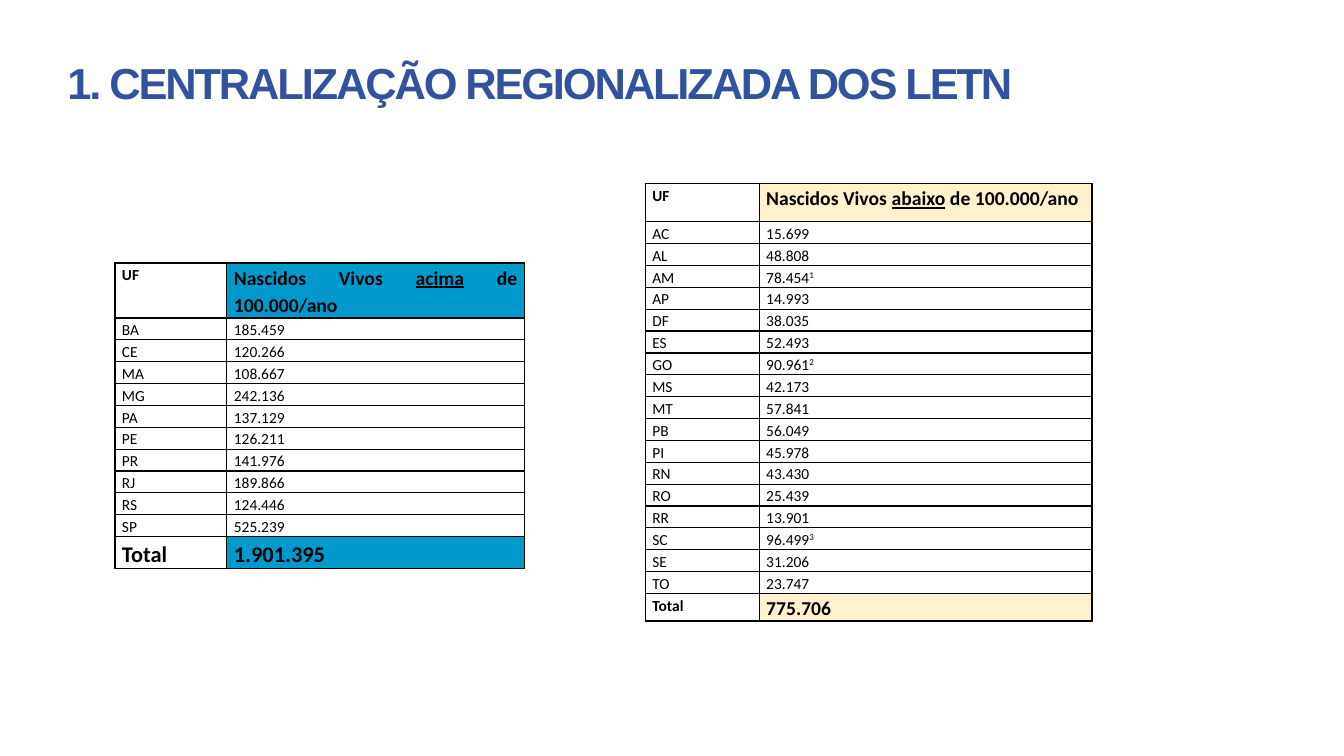
from pptx import Presentation
from pptx.dml.color import RGBColor
from pptx.enum.shapes import MSO_SHAPE
from pptx.enum.text import MSO_ANCHOR, PP_ALIGN
from pptx.oxml import parse_xml
from pptx.oxml.ns import nsdecls
from pptx.util import Inches, Pt

RECTANGLE = MSO_SHAPE.RECTANGLE
TOP = MSO_ANCHOR.TOP
LEFT, JUSTIFY = PP_ALIGN.LEFT, PP_ALIGN.JUSTIFY

WHITE = RGBColor(0xFF, 0xFF, 0xFF)
BLACK = RGBColor(0x00, 0x00, 0x00)
NAVY = RGBColor(0x33, 0x52, 0x9E)
BLUE = RGBColor(0x00, 0x99, 0xCC)
CREAM = RGBColor(0xFF, 0xF2, 0xCC)

HEADER_HEIGHT, ROW_HEIGHT = 0.38, 0.19
BODY_SIZE, HEADER_SIZE = 11, 14

BIRTHS_ABOVE = [
    ("BA", "185.459"), ("CE", "120.266"), ("MA", "108.667"), ("MG", "242.136"),
    ("PA", "137.129"), ("PE", "126.211"), ("PR", "141.976"), ("RJ", "189.866"),
    ("RS", "124.446"), ("SP", "525.239"),
]
BIRTHS_BELOW = [
    ("AC", "15.699"), ("AL", "48.808"), ("AM", "78.454", "1"), ("AP", "14.993"),
    ("DF", "38.035"), ("ES", "52.493"), ("GO", "90.961", "2"), ("MS", "42.173"),
    ("MT", "57.841"), ("PB", "56.049"), ("PI", "45.978"), ("RN", "43.430"),
    ("RO", "25.439"), ("RR", "13.901"), ("SC", "96.499", "3"), ("SE", "31.206"),
    ("TO", "23.747"),
]


def add_span(para, text, size, color=BLACK, name="Calibri", bold=False):
    span = para.add_run()
    span.text = text
    span.font.name = name
    span.font.size = Pt(size)
    span.font.bold = bold
    span.font.color.rgb = color
    return span


def add_title(page, box, text):
    title = page.shapes.add_shape(RECTANGLE, *map(Inches, box))
    title.shadow.inherit = False
    title.fill.solid()
    title.fill.fore_color.rgb = WHITE
    title.line.fill.background()
    frame = title.text_frame
    frame.word_wrap = True
    frame.vertical_anchor = TOP
    para = frame.paragraphs[0]
    para.alignment = LEFT
    para.line_spacing = 0.9
    span = add_span(para, text, 31, NAVY, "Arial", True)
    span.font._element.set("spc", "-150")


def style_cell(cell, fill=None):
    cell.margin_left = cell.margin_right = Inches(0.07)
    cell.margin_top = cell.margin_bottom = 0
    cell.vertical_anchor = TOP
    if fill is None:
        cell.fill.background()
    else:
        cell.fill.solid()
        cell.fill.fore_color.rgb = fill
    properties = cell._tc.get_or_add_tcPr()
    for index, side in enumerate(("lnL", "lnR", "lnT", "lnB")):
        properties.insert(index, parse_xml(
            f'<a:{side} {nsdecls("a")} w="12700"><a:solidFill>'
            f'<a:srgbClr val="{BLACK}"/></a:solidFill></a:{side}>'))
    para = cell.text_frame.paragraphs[0]
    para.alignment = JUSTIFY
    para.line_spacing = 1.15
    return para


def add_births_table(page, box, state_width, limit, births, total, total_sizes, accent):
    left, top, width = box
    count = len(births) + 2
    height = HEADER_HEIGHT + ROW_HEIGHT * (count - 1)
    frame = page.shapes.add_table(
        count, 2, Inches(left), Inches(top), Inches(width), Inches(height))
    table = frame.table
    table.first_row = table.horz_banding = False
    table.columns[0].width = Inches(state_width)
    table.columns[1].width = Inches(width - state_width)
    for index, row in enumerate(table.rows):
        row.height = Inches(ROW_HEIGHT if index else HEADER_HEIGHT)

    add_span(style_cell(table.cell(0, 0)), "UF", BODY_SIZE, bold=True)
    heading = style_cell(table.cell(0, 1), accent)
    for text in ("Nascidos Vivos ", limit, " de 100.000/ano"):
        span = add_span(heading, text, HEADER_SIZE, bold=True)
        span.font.underline = text == limit

    for index, (state, value, *notes) in enumerate(births, 1):
        add_span(style_cell(table.cell(index, 0)), state, BODY_SIZE)
        para = style_cell(table.cell(index, 1))
        add_span(para, value, BODY_SIZE)
        for note in notes:
            span = add_span(para, note, BODY_SIZE)
            span.font._element.set("baseline", "30000")

    for column, (text, size, fill) in enumerate(
            zip(("Total", total), total_sizes, (None, accent))):
        add_span(style_cell(table.cell(count - 1, column), fill), text, size, bold=True)


def main():
    deck = Presentation()
    deck.slide_width, deck.slide_height = Inches(13.33), Inches(7.5)
    page = deck.slides.add_slide(deck.slide_layouts[6])
    add_title(page, (0.57, 0.57, 9.59, 1.08), "1. CENTRALIZAÇÃO REGIONALIZADA DOS LETN")
    add_births_table(page, (1.14, 2.61, 4.06), 1.11, "acima",
                     BIRTHS_ABOVE, "1.901.395", (16, 16), BLUE)
    add_births_table(page, (6.4, 1.82, 4.43), 1.13, "abaixo",
                     BIRTHS_BELOW, "775.706", (BODY_SIZE, HEADER_SIZE), CREAM)
    deck.save("out.pptx")


if __name__ == "__main__":
    main()
